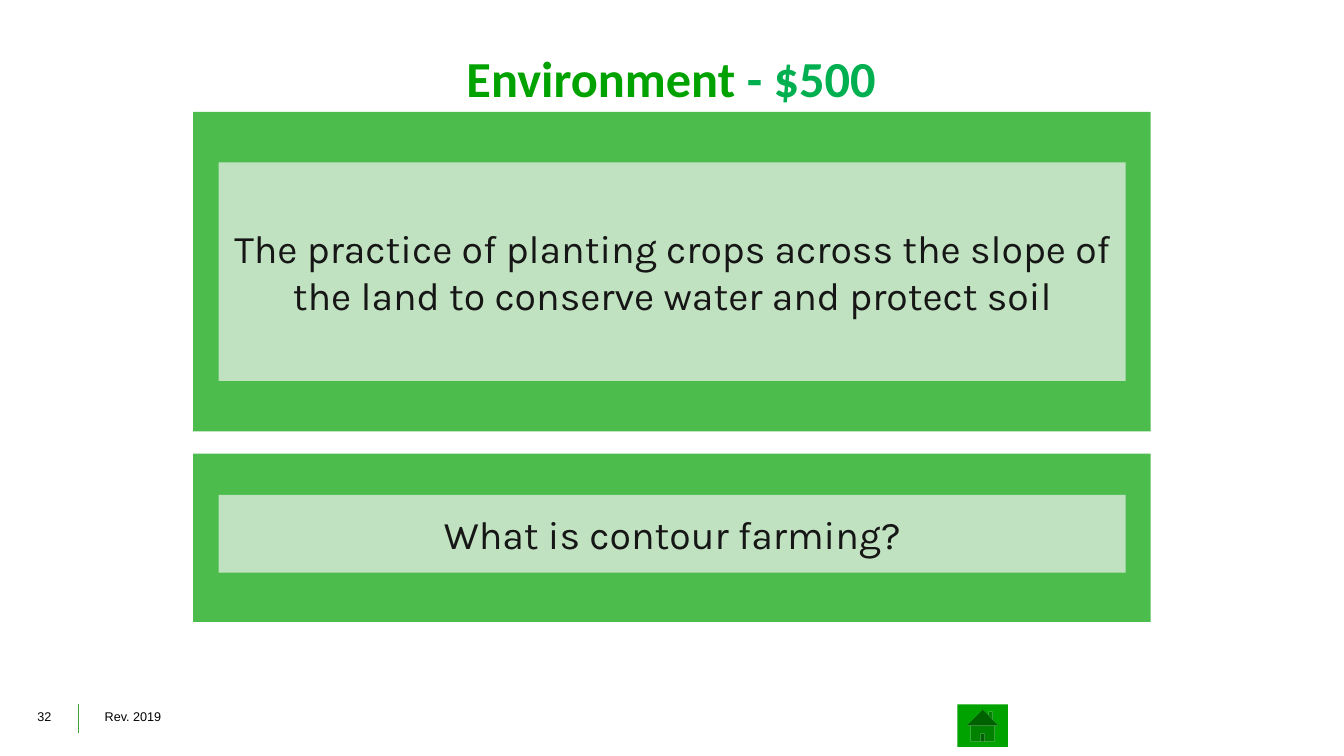
"""Build the Environment $500 quiz slide."""
from dataclasses import dataclass

from lxml.etree import SubElement
from pptx import Presentation
from pptx.dml.color import RGBColor
from pptx.enum.shapes import MSO_CONNECTOR, MSO_SHAPE
from pptx.enum.text import MSO_ANCHOR, PP_ALIGN
from pptx.oxml.ns import qn
from pptx.shapes.autoshape import Shape
from pptx.slide import Slide
from pptx.text.text import TextFrame
from pptx.util import Cm, Pt


@dataclass(frozen=True)
class Theme:
    green: str = "00A200"
    price_green: str = "00B050"
    rule_green: str = "40A035"
    pale: str = "F2F2F2"
    ink: str = "161616"
    black: str = "000000"
    title_size: int = 36
    body_size: int = 28
    footer_size: int = 9
    opacity: int = 70


@dataclass(frozen=True)
class Area:
    left: float
    top: float
    width: float
    height: float

    def lengths(self) -> tuple[Cm, Cm, Cm, Cm]:
        return Cm(self.left), Cm(self.top), Cm(self.width), Cm(self.height)


@dataclass(frozen=True)
class Card:
    text: str
    frame: Area
    inner: Area


@dataclass(frozen=True)
class Footer:
    text: str
    area: Area


THEME = Theme()
CARDS = (
    Card("The practice of planting crops across the slope of the land to conserve water and protect soil",
         Area(4.87, 2.82, 24.13, 8.05), Area(5.51, 4.09, 22.86, 5.51)),
    Card("What is contour farming?",
         Area(4.87, 11.43, 24.13, 4.24), Area(5.51, 12.47, 22.86, 1.96)),
)
FOOTERS = (
    Footer("32", Area(0.69, 17.75, 1.24, 0.64)),
    Footer("Rev. 2019", Area(2.39, 17.75, 1.98, 0.64)),
)
TITLE_AREA = Area(0.61, 1.19, 32.61, 2.36)
HOME_AREA = Area(24.13, 17.75, 1.27, 1.07)


def write(frame: TextFrame, text: str, *, size: int, font: str, color: str,
          bold: bool = False, align: PP_ALIGN = PP_ALIGN.LEFT) -> None:
    para = frame.paragraphs[0]
    para.alignment = align
    span = para.add_run()
    span.text = text
    span.font.size = Pt(size)
    span.font.name = font
    span.font.bold = bold
    span.font.color.rgb = RGBColor.from_string(color)


def add_block(page: Slide, kind: MSO_SHAPE, area: Area, color: str, opacity: int = 100) -> Shape:
    block = page.shapes.add_shape(kind, *area.lengths())
    block.shadow.inherit = False
    block.fill.solid()
    block.fill.fore_color.rgb = RGBColor.from_string(color)
    block.line.fill.background()
    if opacity < 100:
        tint = block.element.spPr.find(qn("a:solidFill")).find(qn("a:srgbClr"))
        SubElement(tint, qn("a:alpha")).set("val", str(opacity * 1000))
    return block


def add_title(page: Slide) -> None:
    frame = page.shapes.add_textbox(*TITLE_AREA.lengths()).text_frame
    frame.word_wrap = True
    frame.margin_left = frame.margin_right = frame.margin_top = frame.margin_bottom = Cm(0)
    for text, color in (("Environment ", THEME.green), ("- $500", THEME.price_green)):
        write(frame, text, size=THEME.title_size, font="Calibri", color=color,
              bold=True, align=PP_ALIGN.CENTER)


def add_card(page: Slide, card: Card) -> None:
    add_block(page, MSO_SHAPE.RECTANGLE, card.frame, THEME.green, THEME.opacity)
    panel = add_block(page, MSO_SHAPE.RECTANGLE, card.inner, THEME.pale, THEME.opacity)
    frame = panel.text_frame
    frame.word_wrap = True
    frame.vertical_anchor = MSO_ANCHOR.MIDDLE
    write(frame, card.text, size=THEME.body_size, font="Karla", color=THEME.ink,
          align=PP_ALIGN.CENTER)


def add_footer(page: Slide, footer: Footer) -> None:
    frame = page.shapes.add_textbox(*footer.area.lengths()).text_frame
    frame.word_wrap = True
    write(frame, footer.text, size=THEME.footer_size, font="Arial", color=THEME.black)


def add_footer_rule(page: Slide) -> None:
    rule = page.shapes.add_connector(MSO_CONNECTOR.STRAIGHT, Cm(1.97), Cm(17.73), Cm(1.97), Cm(18.47))
    rule.line.color.rgb = RGBColor.from_string(THEME.rule_green)
    rule.line.width = Pt(0.25)
    SubElement(rule.element.spPr, qn("a:effectLst"))


def main() -> None:
    deck = Presentation()
    deck.slide_width, deck.slide_height = Cm(33.87), Cm(19.05)
    page = deck.slides.add_slide(deck.slide_layouts[6])
    for footer in FOOTERS:
        add_footer(page, footer)
    add_footer_rule(page)
    for card in CARDS:
        add_card(page, card)
    add_title(page)
    add_block(page, MSO_SHAPE.ACTION_BUTTON_HOME, HOME_AREA, THEME.green)
    deck.save("out.pptx")


if __name__ == "__main__":
    main()
